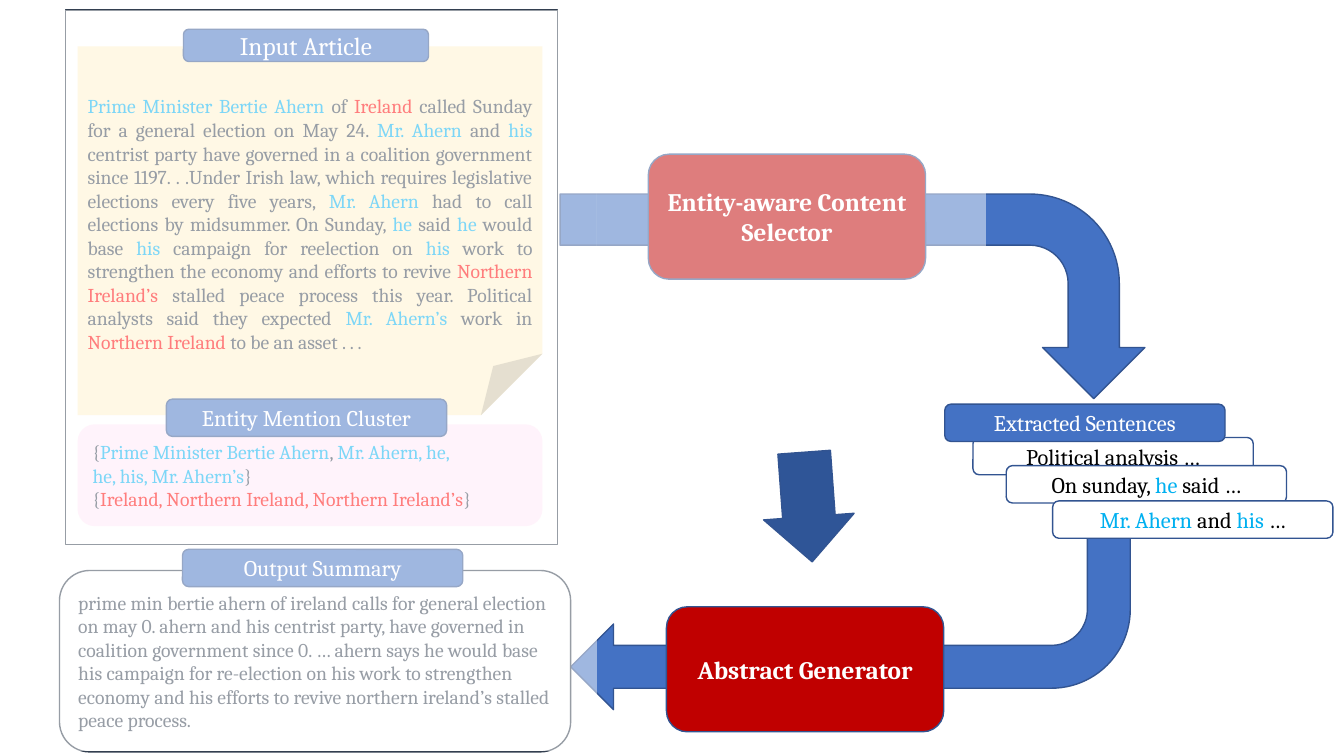
from lxml import etree
from pptx import Presentation
from pptx import util as u
from pptx.dml.color import RGBColor
from pptx.enum import shapes, text
from pptx.oxml import ns

# Lengths count cells of a grid whose columns and rows are one inch.
CELL = u.Inches(1)
COLUMNS, ROWS = 13.33, 7.5
SHAPE, ALIGN = shapes.MSO_SHAPE, text.PP_ALIGN
BLUE, EDGE, RED, SLATE = "4472C4", "325491", "C00000", "333F50"
WHITE, BLACK = "FFFFFF", "000000"
MARKS = {"@": "00B0F0", "#": "FF0000"}
LABEL_WIDTH, LABEL_HEIGHT = 2.78, 0.37

ARTICLE = (
    "@Prime Minister Bertie Ahern |of |#Ireland| called Sunday for a general "
    "election on May 24. |@Mr. Ahern |and |@his| centrist party have governed in "
    "a coalition government since 1197. . .Under Irish law, which requires "
    "legislative elections every five years, |@Mr. Ahern |had to call elections "
    "by midsummer. On Sunday, |@he| said |@he| would base |@his| campaign for "
    "reelection on |@his| work to strengthen the economy and efforts to revive "
    "|#Northern Ireland’s |stalled peace process this year. Political analysts "
    "said they expected |@Mr. Ahern’s| work in |#Northern Ireland| to be an "
    "asset . . .")
CLUSTERS = [
    "{|@Prime Minister Bertie Ahern|, |@Mr. Ahern, he,",
    "@he, his, Mr. Ahern’s|}",
    "{|#Ireland, Northern Ireland, Northern Ireland’s|}"]
SUMMARY = (
    "prime min bertie ahern of ireland calls for general election on may 0. ahern "
    "and his centrist party, have governed in coalition government since 0. … "
    "ahern says he would base his campaign for re-election on his work to "
    "strengthen economy and his efforts to revive northern ireland’s stalled "
    "peace process.")


def color(value):
    return RGBColor.from_string(value)


def inside(box, left, top, width, height):
    """Turn a box measured from the corner of another into a slide box."""
    return box[0] + left, box[1] + top, width, height


def add_block(slide, kind, box, fill=None, line=None, turn=0, adjust=()):
    shape = slide.shapes.add_shape(kind, *(round(side * CELL) for side in box))
    shape.shadow.inherit = False
    shape.rotation = turn
    for index, value in enumerate(adjust):
        shape.adjustments[index] = value
    if fill:
        shape.fill.solid()
        shape.fill.fore_color.rgb = color(fill)
    else:
        shape.fill.background()
    if line:
        shape.line.color.rgb = color(line)
        shape.line.width = u.Pt(1)
    else:
        shape.line.fill.background()
    return shape


def write(shape, *lines, size=16, ink=WHITE, bold=False, align=ALIGN.CENTER):
    """Fill a shape with paragraphs; | parts runs, @ marks a person, # a place."""
    frame = shape.text_frame
    frame.word_wrap = True
    frame.vertical_anchor = text.MSO_ANCHOR.MIDDLE
    for number, content in enumerate(lines):
        paragraph = frame.add_paragraph() if number else frame.paragraphs[0]
        paragraph.alignment = align
        for piece in content.split("|"):
            run = paragraph.add_run()
            run.text = piece.lstrip("@#")
            run.font.name = "Cambria"
            run.font.size = u.Pt(size)
            run.font.bold = bold
            run.font.color.rgb = color(MARKS.get(piece[:1], ink))


def add_label(slide, box, content, size=16, fill=BLUE, ink=WHITE):
    label = add_block(slide, SHAPE.ROUNDED_RECTANGLE, box, fill, EDGE)
    write(label, content, size=size, ink=ink)


def add_flow_arrows(slide, box):
    add_block(slide, SHAPE.BENT_ARROW, inside(box, 0.1, 5.3, 5.55, 1.7),
              BLUE, EDGE, turn=180, adjust=(0.25, 0.25, 0.25, 0.46))
    add_block(slide, SHAPE.BENT_ARROW, inside(box, 1.88, 0, 2.03, 5.8),
              BLUE, EDGE, turn=90)


def add_input(slide, box):
    note = add_block(slide, SHAPE.FOLDED_CORNER,
                     inside(box, 0.12, 0.36, 4.61, 3.66), "FFF2CC")
    note.text_frame.margin_top = u.Inches(0.52)
    write(note, ARTICLE, size=14, ink=SLATE, align=ALIGN.JUSTIFY)
    add_label(slide, inside(box, 1.17, 0.19, 2.43, 0.32), "Input Article", size=18)

    cluster = add_block(slide, SHAPE.ROUNDED_RECTANGLE,
                        inside(box, 0.12, 4.11, 4.61, 1.01), "FFE9F8")
    write(cluster, *CLUSTERS, size=14, ink=SLATE, align=ALIGN.LEFT)
    add_label(slide, inside(box, 1, 3.86, LABEL_WIDTH, LABEL_HEIGHT),
              "Entity Mention Cluster")
    add_block(slide, SHAPE.RECTANGLE, box, line=SLATE)


def add_output(slide, box):
    summary = add_block(slide, SHAPE.ROUNDED_RECTANGLE, box, WHITE, SLATE)
    write(summary, SUMMARY, size=14, ink=SLATE, align=ALIGN.LEFT)
    add_label(slide, inside(box, 1.22, -0.21, LABEL_WIDTH, LABEL_HEIGHT),
              "Output Summary")


def add_module(slide, box, name):
    module = add_block(slide, SHAPE.ROUNDED_RECTANGLE, box, RED, EDGE)
    write(module, name, size=18, bold=True)


def add_extracted_sentences(slide, box):
    cards = [
        (0.28, 0.33, "Political analysis …", WHITE, BLACK),
        (0, 0, "Extracted Sentences", BLUE, WHITE),
        (0.61, 0.61, "On sunday, |@he| said …", WHITE, BLACK),
        (1.07, 0.96, "@Mr. Ahern |and |@his| …", WHITE, BLACK)]
    for left, top, content, fill, ink in cards:
        add_label(slide, inside(box, left, top, LABEL_WIDTH, LABEL_HEIGHT),
                  content, fill=fill, ink=ink)


def add_veil(slide, box):
    """Fade the finished steps with a half-transparent white sheet."""
    veil = add_block(slide, SHAPE.RECTANGLE, box, WHITE)
    white = veil.fill._xPr.find(ns.qn("a:solidFill"))[0]
    etree.SubElement(white, ns.qn("a:alpha"), val="49000")


def main():
    presentation = Presentation()
    presentation.slide_width = round(COLUMNS * CELL)
    presentation.slide_height = round(ROWS * CELL)
    slide = presentation.slides.add_slide(presentation.slide_layouts[6])

    add_flow_arrows(slide, (5.56, 0.04, 5.8, 7))
    add_input(slide, (0.65, 0.1, 4.88, 5.3))
    add_output(slide, (0.59, 5.66, 5.07, 1.8))
    add_module(slide, (6.43, 1.53, 2.75, 1.24), "Entity-aware Content Selector")
    add_module(slide, (6.61, 6.02, 2.75, 1.24), "Abstract Generator")
    add_extracted_sentences(slide, (9.37, 4.01, 3.85, 1.33))
    add_veil(slide, (0.33, 0.1, 5.59, 7.35))
    add_veil(slide, (5.92, 0.89, 3.86, 2.88))
    add_block(slide, SHAPE.RIGHT_ARROW, (7.47, 4.58, 1.09, 0.9),
              "2F5597", EDGE, turn=85.8, adjust=(0.58, 0.5))

    presentation.save("out.pptx")


if __name__ == "__main__":
    main()
